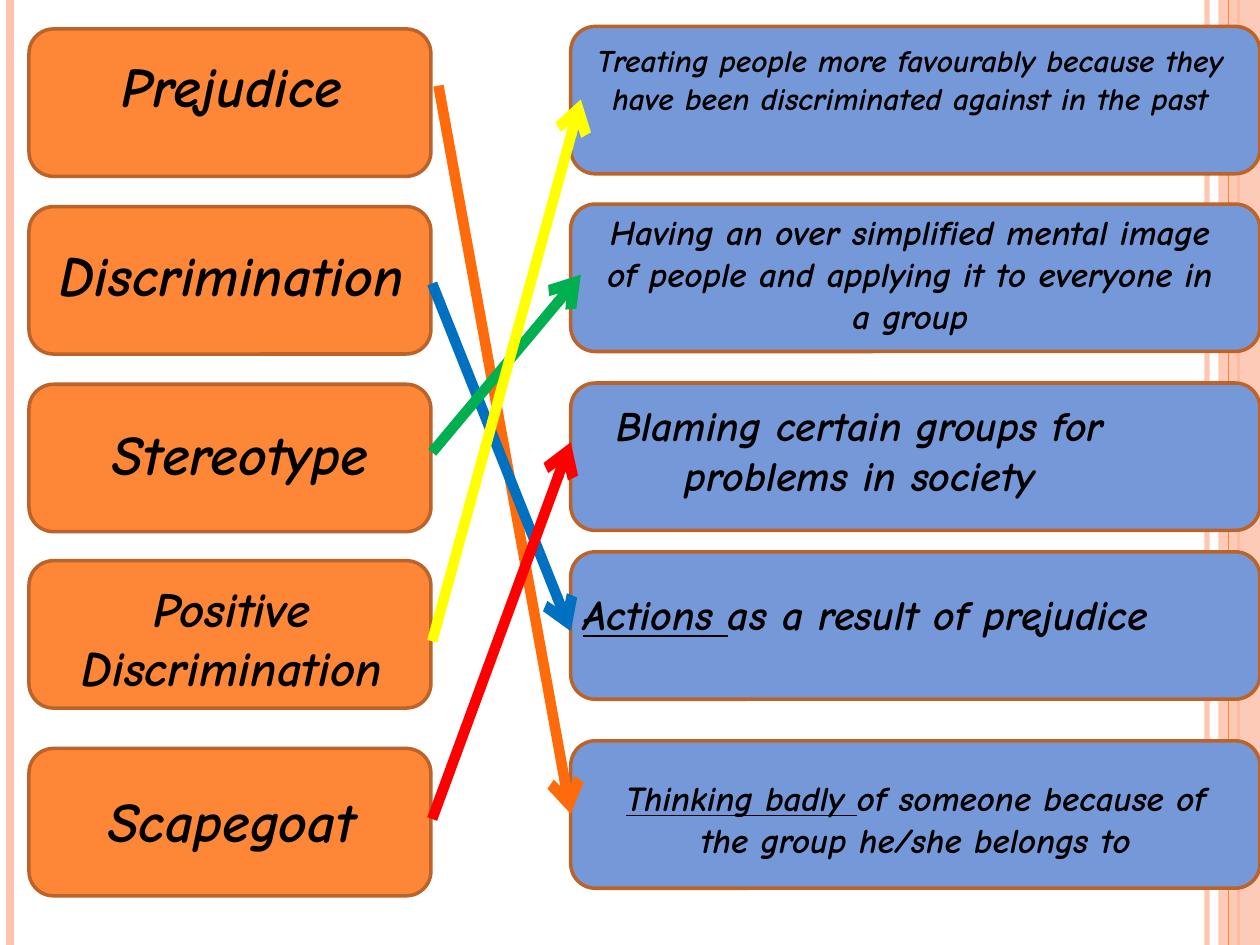
from dataclasses import dataclass

from lxml import etree
from pptx import Presentation
from pptx.dml.color import RGBColor
from pptx.enum.shapes import MSO_CONNECTOR, MSO_SHAPE
from pptx.enum.text import MSO_AUTO_SIZE, PP_ALIGN
from pptx.oxml.ns import qn
from pptx.shapes.autoshape import Shape
from pptx.shapes.connector import Connector
from pptx.slide import Slide
from pptx.util import Inches, Pt

STRAIGHT = MSO_CONNECTOR.STRAIGHT
RECTANGLE = MSO_SHAPE.RECTANGLE
ROUNDED = MSO_SHAPE.ROUNDED_RECTANGLE
GROW = MSO_AUTO_SIZE.SHAPE_TO_FIT_TEXT
CENTER = PP_ALIGN.CENTER

PEACH = RGBColor(0xFE, 0xC3, 0xAE)
ORANGE = RGBColor(0xFE, 0x86, 0x37)
BROWN = RGBColor(0xBC, 0x63, 0x29)
PERIWINKLE = RGBColor(0x75, 0x98, 0xD9)
BLACK = RGBColor(0x00, 0x00, 0x00)
DEEP_ORANGE = RGBColor(0xFF, 0x6B, 0x0A)
BLUE = RGBColor(0x00, 0x70, 0xC0)
GREEN = RGBColor(0x00, 0xB0, 0x50)
YELLOW = RGBColor(0xFF, 0xFF, 0x00)
RED = RGBColor(0xFF, 0x00, 0x00)

SLIDE_WIDTH, SLIDE_HEIGHT = 10, 7.5
CARD_HEIGHT = 1.17
TEXT_FORMAT = {"name": "Comic Neue", "bold": True, "italic": True}


@dataclass(frozen=True)
class Column:
    left: float
    width: float
    fill: RGBColor
    tops: tuple[float, ...]


@dataclass(frozen=True)
class Label:
    left: float
    top: float
    width: float
    height: float
    size: int
    text: str
    underlined: str = ""


@dataclass(frozen=True)
class Rule:
    start: tuple[float, float]
    end: tuple[float, float]
    color: RGBColor
    weight: float


TERM_CARDS = Column(0.23, 3.19, ORANGE, (0.23, 1.64, 3.05, 4.45, 5.94))
MEANING_CARDS = Column(4.53, 5.47, PERIWINKLE, (0.21, 1.62, 3.04, 4.38, 5.88))

TERMS = (
    Label(0.2, 0.36, 3.28, 0.64, 32, "Prejudice"),
    Label(0.2, 1.86, 3.28, 0.64, 32, "Discrimination"),
    Label(0.27, 3.28, 3.28, 0.64, 32, "Stereotype"),
    Label(0.2, 4.54, 3.28, 1.04, 28, "Positive Discrimination"),
    Label(0.2, 6.19, 3.28, 0.64, 32, "Scapegoat"),
)
MEANINGS = (
    Label(4.61, 0.28, 5.23, 1.01, 18,
          "Treating people more favourably because they have been discriminated against in the past"),
    Label(4.61, 1.62, 5.23, 1.11, 20,
          "Having an over simplified mental image of people and applying it to everyone in a group"),
    Label(4.21, 3.12, 5.23, 0.91, 24, "Blaming certain groups for problems in society"),
    Label(4.29, 4.62, 5.16, 0.91, 24, "as a result of prejudice", "Actions "),
    Label(4.69, 6.11, 5.16, 0.77, 20,
          "of someone because of the group he/she belongs to", "Thinking badly "),
)
MATCHES = (
    Rule((3.48, 0.68), (4.53, 6.46), DEEP_ORANGE, 6),
    Rule((3.43, 2.25), (4.53, 5.01), BLUE, 6),
    Rule((3.43, 3.59), (4.61, 2.18), GREEN, 6),
    Rule((3.43, 5.09), (4.61, 0.79), YELLOW, 6),
    Rule((3.43, 6.5), (4.53, 3.51), RED, 6),
)


def set_opacity(part: Shape | Connector, percent: int) -> None:
    color = next(part._element.spPr.iter(qn("a:srgbClr")))
    etree.SubElement(color, qn("a:alpha"), val=str(percent * 1000))


def draw_rule(slide: Slide, rule: Rule) -> Connector:
    connector = slide.shapes.add_connector(
        STRAIGHT, *(Inches(value) for value in rule.start + rule.end))
    connector.line.color.rgb = rule.color
    connector.line.width = Pt(rule.weight)
    etree.SubElement(connector._element.spPr, qn("a:effectLst"))
    return connector


def draw_stripe(slide: Slide, x: float, color: RGBColor, weight: float) -> Connector:
    return draw_rule(slide, Rule((x, 0), (x, SLIDE_HEIGHT), color, weight))


def draw_match(slide: Slide, match: Rule) -> None:
    line = draw_rule(slide, match).line
    etree.SubElement(line._get_or_add_ln(), qn("a:tailEnd"), type="arrow")


def draw_border(slide: Slide) -> None:
    set_opacity(draw_stripe(slide, 9.58, PEACH, 3), 93)
    draw_stripe(slide, 0.08, PEACH, 4.5)
    draw_stripe(slide, 9.83, ORANGE, 1.5)
    band = slide.shapes.add_shape(
        RECTANGLE, Inches(9.67), 0, Inches(0.33), Inches(SLIDE_HEIGHT))
    band.shadow.inherit = False
    band.fill.solid()
    band.fill.fore_color.rgb = PEACH
    band.line.fill.background()
    set_opacity(band, 87)
    draw_stripe(slide, 9.75, ORANGE, 0.75)


def draw_cards(slide: Slide, column: Column) -> None:
    for top in column.tops:
        card = slide.shapes.add_shape(
            ROUNDED, Inches(column.left), Inches(top),
            Inches(column.width), Inches(CARD_HEIGHT))
        card.shadow.inherit = False
        card.fill.solid()
        card.fill.fore_color.rgb = column.fill
        card.line.color.rgb = BROWN
        card.line.width = Pt(2)


def draw_label(slide: Slide, label: Label) -> None:
    frame = slide.shapes.add_textbox(
        Inches(label.left), Inches(label.top),
        Inches(label.width), Inches(label.height)).text_frame
    frame.word_wrap = True
    frame.auto_size = GROW
    paragraph = frame.paragraphs[0]
    paragraph.alignment = CENTER
    for wording, underline in ((label.underlined, True), (label.text, False)):
        if wording:
            run = paragraph.add_run()
            run.text = wording
            run.font.color.rgb = BLACK
            formats = TEXT_FORMAT | {"size": Pt(label.size), "underline": underline}
            for attribute, value in formats.items():
                setattr(run.font, attribute, value)


def main() -> None:
    deck = Presentation()
    deck.slide_width = Inches(SLIDE_WIDTH)
    deck.slide_height = Inches(SLIDE_HEIGHT)
    slide = deck.slides.add_slide(deck.slide_layouts[6])
    draw_border(slide)
    for column in (TERM_CARDS, MEANING_CARDS):
        draw_cards(slide, column)
    for label in TERMS + MEANINGS:
        draw_label(slide, label)
    for match in MATCHES:
        draw_match(slide, match)
    deck.save("out.pptx")


if __name__ == "__main__":
    main()
